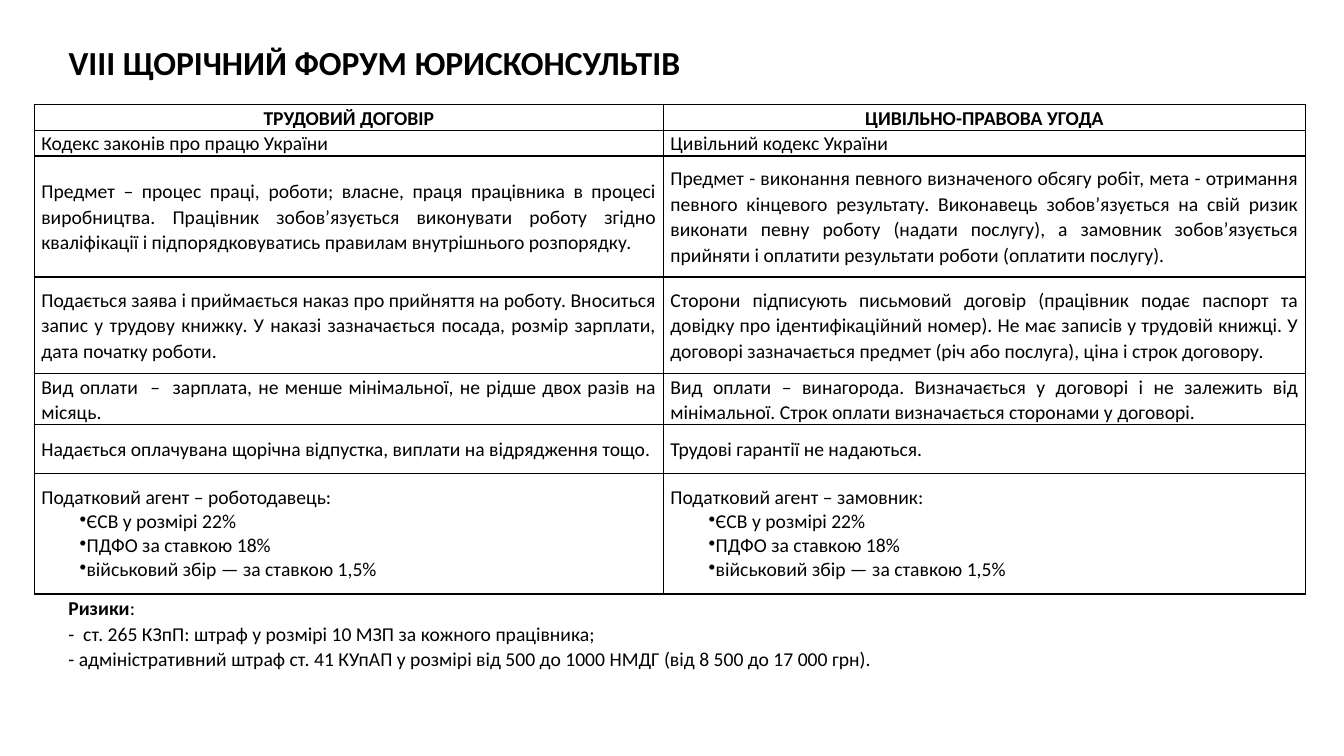
from lxml import etree
from pptx import Presentation
from pptx import util as u
from pptx.dml.color import RGBColor
from pptx.enum import text
from pptx.oxml import parse_xml
from pptx.oxml.ns import nsdecls, qn

BLACK, WHITE = "000000", "FFFFFF"
COLS = [6.24, 6.37]
ROWS = [0.24, 0.24, 1.2, 0.96, 0.48, 0.48, 1.2]
HEADERS = ["ТРУДОВИЙ ДОГОВІР", "ЦИВІЛЬНО-ПРАВОВА УГОДА"]
COMPARISON = [
    ["Кодекс законів про працю України", "Цивільний кодекс України"],
    ["Предмет – процес праці, роботи; власне, праця працівника в процесі виробництва. "
     "Працівник зобов’язується виконувати роботу згідно кваліфікації і "
     "підпорядковуватись правилам внутрішнього розпорядку.",
     "Предмет - виконання певного визначеного обсягу робіт, мета - отримання певного "
     "кінцевого результату. Виконавець зобов’язується на свій ризик виконати певну "
     "роботу (надати послугу), а замовник зобов’язується прийняти і оплатити "
     "результати роботи (оплатити послугу)."],
    ["Подається заява і приймається наказ про прийняття на роботу. Вноситься запис у "
     "трудову книжку. У наказі зазначається посада, розмір зарплати, дата початку роботи.",
     "Сторони підписують письмовий договір (працівник подає паспорт та довідку про "
     "ідентифікаційний номер). Не має записів у трудовій книжці. У договорі "
     "зазначається предмет (річ або послуга), ціна і строк договору."],
    ["Вид оплати  –  зарплата, не менше мінімальної, не рідше двох разів на місяць.",
     "Вид оплати – винагорода. Визначається у договорі і не залежить від мінімальної. "
     "Строк оплати визначається сторонами у договорі."],
    ["Надається оплачувана щорічна відпустка, виплати на відрядження тощо.",
     "Трудові гарантії не надаються."],
]
TAX_AGENTS = ["Податковий агент – роботодавець:", "Податковий агент – замовник:"]
TAXES = ["ЄСВ у розмірі 22%", "ПДФО за ставкою 18%", "військовий збір — за ставкою 1,5%"]
RISKS = [
    [("Ризики", True), (":", False)],
    [("-  ст. 265 КЗпП: штраф у розмірі 10 МЗП за кожного працівника;", False)],
    [("- адміністративний штраф ст. 41 КУпАП у розмірі від 500 до 1000 НМДГ "
      "(від 8 500 до 17 000 грн).", False)],
]


def rgb(color):
    return RGBColor.from_string(color)


def apply(obj, **values):
    for name, value in values.items():
        setattr(obj, name, value)


def add_run(p, words, size=14, bold=False):
    r = p.add_run()
    r.text = words
    apply(r.font, name="Calibri", size=u.Pt(size), bold=bold)
    r.font.color.rgb = rgb(BLACK)


def next_paragraph(tf, first):
    return tf.paragraphs[0] if first else tf.add_paragraph()


def add_bullet(p):
    pPr = p._p.get_or_add_pPr()
    pPr.set("marL", str(u.Inches(0.38)))
    pPr.set("indent", "0")
    etree.SubElement(pPr, qn("a:buChar")).set("char", "•")
    tabs = etree.SubElement(pPr, qn("a:tabLst"))
    tab = etree.SubElement(tabs, qn("a:tab"))
    tab.set("pos", str(u.Inches(0.5)))
    tab.set("algn", "l")


def style_cell(cell, anchor):
    apply(cell, margin_left=u.Inches(0.07), margin_right=u.Inches(0.07),
          margin_top=0, margin_bottom=0, vertical_anchor=anchor)
    tcPr = cell._tc.get_or_add_tcPr()
    for side in "LRTB":
        tcPr.append(parse_xml(
            f'<a:ln{side} {nsdecls("a")} w="{u.Pt(1)}"><a:solidFill>'
            f'<a:srgbClr val="{BLACK}"/></a:solidFill></a:ln{side}>'))
    cell.fill.solid()
    cell.fill.fore_color.rgb = rgb(WHITE)


def fill_cell(cell, words, header=False):
    style_cell(cell, text.MSO_ANCHOR.TOP if header else text.MSO_ANCHOR.MIDDLE)
    p = cell.text_frame.paragraphs[0]
    align = text.PP_ALIGN.CENTER if header else text.PP_ALIGN.JUSTIFY
    apply(p, alignment=align, line_spacing=1.07, space_after=u.Pt(6))
    add_run(p, words, bold=header)


def fill_tax_cell(cell, agent):
    style_cell(cell, text.MSO_ANCHOR.MIDDLE)
    for i, words in enumerate([agent] + TAXES):
        p = next_paragraph(cell.text_frame, i == 0)
        p.alignment = text.PP_ALIGN.JUSTIFY
        if i:
            add_bullet(p)
        add_run(p, words)


def add_title(s, words):
    sp = s.shapes.title
    apply(sp, left=u.Inches(0.58), top=u.Inches(0.37),
          width=u.Inches(6.7), height=u.Inches(0.5))
    tf = sp.text_frame
    apply(tf, word_wrap=True, auto_size=text.MSO_AUTO_SIZE.NONE,
          vertical_anchor=text.MSO_ANCHOR.TOP)
    p = tf.paragraphs[0]
    apply(p, alignment=text.PP_ALIGN.LEFT, line_spacing=1.0)
    add_run(p, words, size=24, bold=True)


def add_comparison(s):
    table = s.shapes.add_table(len(ROWS), len(COLS), u.Inches(0.34), u.Inches(1.04),
                               u.Inches(sum(COLS)), u.Inches(sum(ROWS))).table
    apply(table, first_row=False, horz_banding=False)
    for col, width in zip(table.columns, COLS):
        col.width = u.Inches(width)
    for row, height in zip(table.rows, ROWS):
        row.height = u.Inches(height)
    for i, row in enumerate([HEADERS] + COMPARISON):
        for j, words in enumerate(row):
            fill_cell(table.cell(i, j), words, header=i == 0)
    for j, agent in enumerate(TAX_AGENTS):
        fill_tax_cell(table.cell(len(ROWS) - 1, j), agent)


def add_risks(s):
    sp = s.shapes.add_textbox(u.Inches(0.58), u.Inches(5.85), u.Inches(12.1), u.Inches(0.85))
    tf = sp.text_frame
    tf.word_wrap = True
    for i, runs in enumerate(RISKS):
        p = next_paragraph(tf, i == 0)
        p.line_spacing = 1.07
        for words, bold in runs:
            add_run(p, words, bold=bold)


def main():
    prs = Presentation()
    apply(prs, slide_width=u.Inches(13.33), slide_height=u.Inches(7.5))
    s = prs.slides.add_slide(prs.slide_layouts[5])
    add_title(s, "VIII ЩОРІЧНИЙ ФОРУМ ЮРИСКОНСУЛЬТІВ")
    add_comparison(s)
    add_risks(s)
    prs.save("out.pptx")


if __name__ == "__main__":
    main()
